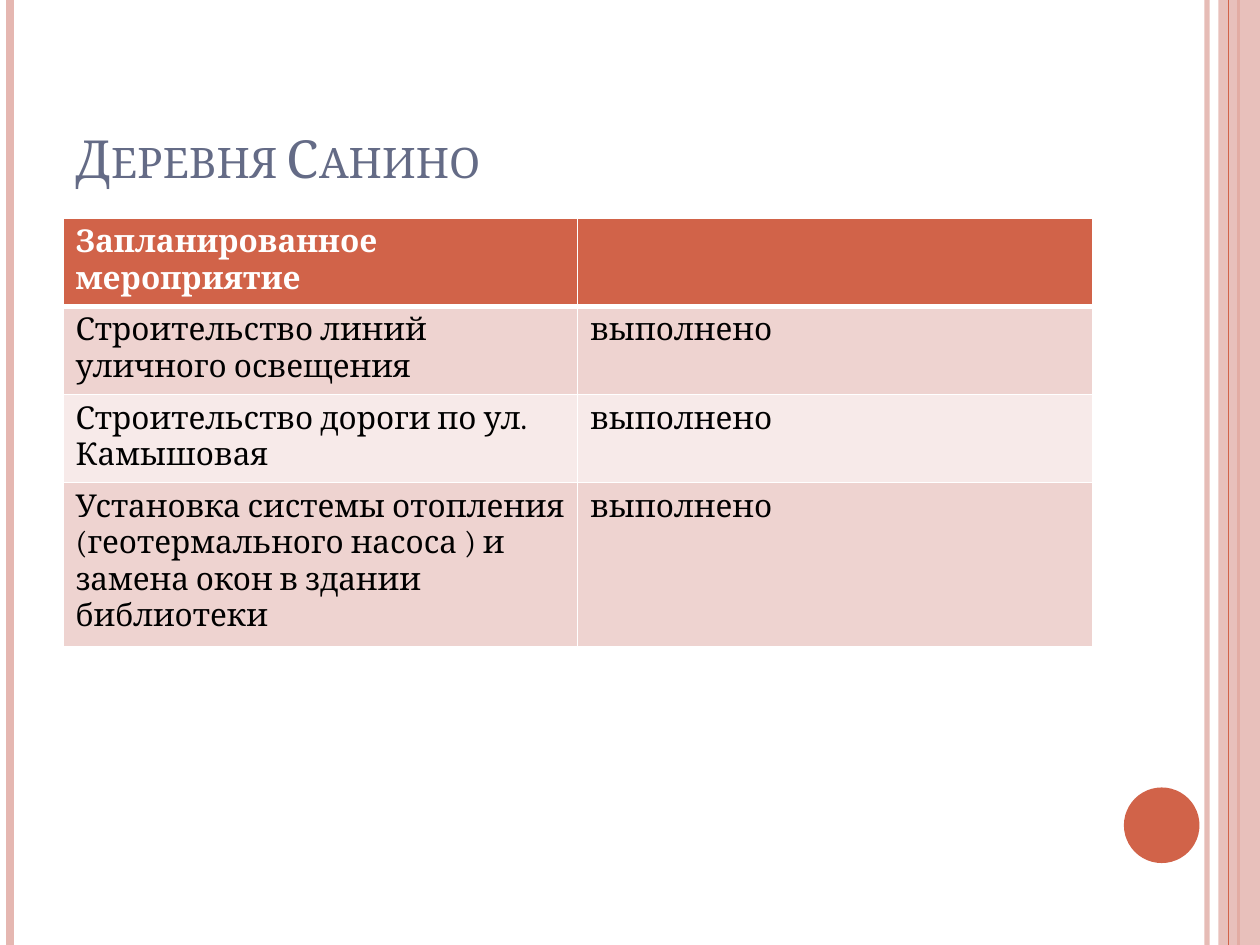
from dataclasses import dataclass

from lxml import etree
from pptx import Presentation
from pptx import util as u
from pptx.dml.color import RGBColor
from pptx.enum import shapes, text
from pptx.oxml import ns


@dataclass(frozen=True)
class Theme:
    font: str = "Cambria"
    title_size: int = 30
    body_size: int = 18
    title: str = "646B86"
    accent: str = "D16349"
    pale: str = "E5B7B1"
    bands: tuple = ("EED3D0", "F7EAE9")
    white: str = "FFFFFF"
    black: str = "000000"


class SlideBuilder:
    """Draws themed elements on one slide, with lengths as shares of its size."""

    def __init__(self, presentation, theme):
        self.theme = theme
        self.width, self.height = presentation.slide_width, presentation.slide_height
        self.slide = presentation.slides.add_slide(presentation.slide_layouts[6])

    def box(self, left, top, width, height):
        return [round(share * side) for share, side in
                zip((left, top, width, height), (self.width, self.height) * 2)]

    def paint(self, fill, color, opacity=100):
        fill.solid()
        fill.fore_color.rgb = RGBColor.from_string(color)
        if opacity < 100:
            for node in fill._xPr.iter(ns.qn("a:srgbClr")):
                etree.SubElement(node, ns.qn("a:alpha"), val=str(opacity * 1000))

    def style(self, paragraph, size, color, bold=False):
        font = paragraph.font
        font.name, font.size, font.bold = self.theme.font, u.Pt(size), bold
        font.color.rgb = RGBColor.from_string(color)
        return font

    def stripe(self, x, weight, color, opacity=100):
        left, top, _, bottom = self.box(x, 0, 0, 1)
        line = self.slide.shapes.add_connector(
            shapes.MSO_CONNECTOR.STRAIGHT, left, top, left, bottom)
        line.line.width = u.Pt(weight)
        self.paint(line.line.fill, color, opacity)
        etree.SubElement(line._element.spPr, ns.qn("a:effectLst"))

    def shape(self, kind, area, color, opacity=100):
        shape = self.slide.shapes.add_shape(kind, *self.box(*area))
        shape.shadow.inherit = False
        shape.line.fill.background()
        self.paint(shape.fill, color, opacity)

    def title(self, area, wording):
        frame = self.slide.shapes.add_textbox(*self.box(*area)).text_frame
        frame.word_wrap = True
        frame.vertical_anchor = text.MSO_ANCHOR.BOTTOM
        paragraph = frame.paragraphs[0]
        paragraph.text = wording
        font = self.style(paragraph, self.theme.title_size, self.theme.title)
        font._element.set("cap", "small")

    def borders(self, cell, top, bottom):
        properties = cell._tc.get_or_add_tcPr()
        for side, weight in zip("LRTB", (1, 1, top, bottom)):
            line = etree.SubElement(properties, ns.qn(f"a:ln{side}"), w=str(u.Pt(weight)))
            fill = etree.SubElement(line, ns.qn("a:solidFill"))
            etree.SubElement(fill, ns.qn("a:srgbClr"), val=self.theme.white)

    def table(self, area, row_shares, rows):
        place = self.box(*area)
        frame = self.slide.shapes.add_table(len(rows), len(rows[0]), *place)
        for index, (share, wordings) in enumerate(zip(row_shares, rows)):
            header = index == 0
            frame.table.rows[index].height = round(share * self.height)
            color = self.theme.accent if header else self.theme.bands[(index - 1) % 2]
            for column, wording in enumerate(wordings):
                cell = frame.table.cell(index, column)
                self.borders(cell, 3 if index == 1 else 1, 3 if header else 1)
                self.paint(cell.fill, color)
                cell.text = wording
                self.style(cell.text_frame.paragraphs[0], self.theme.body_size,
                           self.theme.white if header else self.theme.black, header)
        frame.height = place[3]


def main():
    presentation = Presentation()
    presentation.slide_width, presentation.slide_height = u.Inches(10), u.Inches(7.5)
    theme = Theme()
    builder = SlideBuilder(presentation, theme)

    builder.stripe(0.958, 3, theme.pale, 93)
    builder.stripe(0.008, 4.5, theme.pale)
    builder.stripe(0.983, 1.5, theme.accent)
    builder.shape(shapes.MSO_SHAPE.RECTANGLE, (0.967, 0, 0.033, 1), theme.pale, 87)
    builder.stripe(0.975, 0.75, theme.accent)
    builder.shape(shapes.MSO_SHAPE.OVAL, (0.892, 6.25 / 7.5, 0.06, 0.08), theme.accent)

    builder.title((0.05, 0.04, 0.817, 1.25 / 7.5), "Деревня Санино")
    done = "выполнено"
    builder.table((0.05, 1.73 / 7.5, 0.817, 3.1 / 7.5), (0.055, 0.055, 0.09, 0.09), [
        ("Запланированное мероприятие", ""),
        ("Строительство линий уличного освещения", done),
        ("Строительство дороги по ул. Камышовая", done),
        ("Установка системы отопления (геотермального насоса ) "
         "и замена окон в здании библиотеки", done),
    ])
    presentation.save("out.pptx")


if __name__ == "__main__":
    main()
